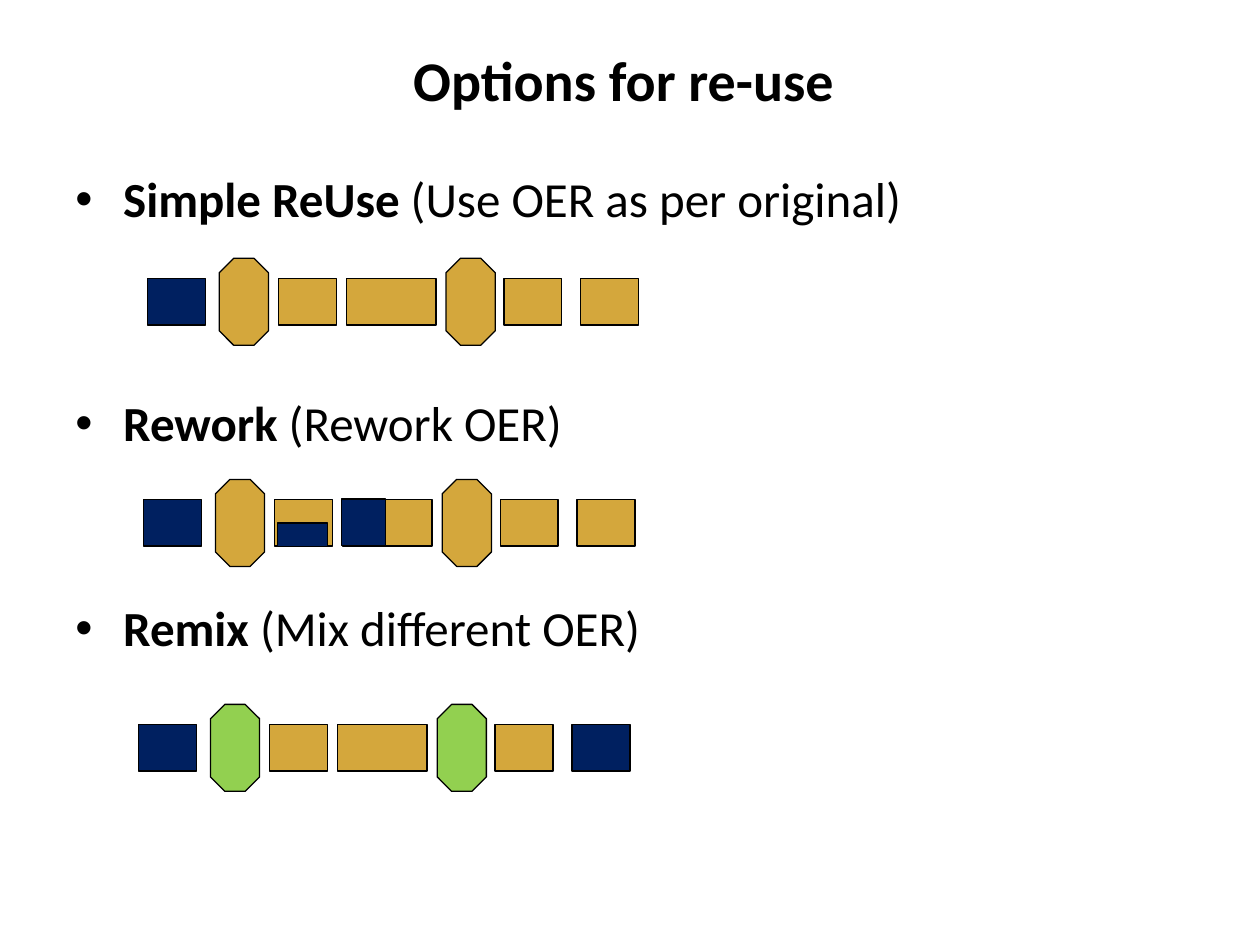
from lxml import etree
from pptx import Presentation
from pptx.dml.color import RGBColor
from pptx.enum import shapes, text
from pptx.oxml import ns
from pptx.util import Inches, Pt

THEME = {
    "font": "Calibri", "title_size": 32, "body_size": 28, "line_width": 0.75,
    "black": "000000", "own": "002060", "oer": "D4A73C", "other_oer": "92D050",
}

TITLE = "Options for re-use "
# Term, explanation, space before in points
OPTIONS = [
    ("Simple ReUse", " (Use OER as per original)", 0),
    ("Rework", " (Rework OER)", 94.5),
    ("Remix", " (Mix different OER)", 83.5),
]

# Every chain has the same parts: offset from the chain's left edge, kind
PARTS = [(0, "block"), (0.57, "octagon"), (1.04, "block"), (1.58, "wide"),
         (2.37, "octagon"), (2.83, "block"), (3.44, "block")]
RECTANGLE, OCTAGON = shapes.MSO_SHAPE.RECTANGLE, shapes.MSO_SHAPE.OCTAGON
KINDS = {"block": (RECTANGLE, 0.46, 0.37), "wide": (RECTANGLE, 0.71, 0.37),
         "octagon": (OCTAGON, 0.39, 0.69)}

# Left edge, centre line, source of each part
CHAINS = [
    (1.17, 2.395, ["own"] + ["oer"] * 6),
    (1.14, 4.15, ["own"] + ["oer"] * 6),
    (1.1, 5.935, ["own", "other_oer", "oer", "oer", "other_oer", "oer", "own"]),
]
# Own content laid over the reworked parts
REWORKED = [(2.2, 4.15, 0.4, 0.19), (2.71, 3.96, 0.35, 0.37)]


def color(name):
    return RGBColor.from_string(THEME[name])


def style(font, size, bold):
    values = {"name": THEME["font"], "size": Pt(size), "bold": bold}
    for attribute, value in values.items():
        setattr(font, attribute, value)
    font.color.rgb = color("black")


def add_part(parent, geometry, box, source):
    part = parent.add_shape(geometry, *map(Inches, box))
    part.shadow.inherit = False
    part.fill.solid()
    part.fill.fore_color.rgb = color(source)
    part.line.color.rgb = color("black")
    part.line.width = Pt(THEME["line_width"])


def add_title(slide):
    title = slide.shapes.title
    place = {"left": 0.5, "top": 0, "width": 9, "height": 1.25}
    for attribute, value in place.items():
        setattr(title, attribute, Inches(value))
    title.text_frame.vertical_anchor = text.MSO_ANCHOR.MIDDLE
    paragraph = title.text_frame.paragraphs[0]
    paragraph.alignment = text.PP_ALIGN.CENTER
    run = paragraph.add_run()
    run.text = TITLE
    style(run.font, THEME["title_size"], True)


def add_bullet(paragraph):
    properties = paragraph._p.get_or_add_pPr()
    properties.set("marL", str(Inches(0.38)))
    properties.set("indent", str(Inches(-0.38)))
    etree.SubElement(properties, ns.qn("a:buFont")).set("typeface", "Arial")
    etree.SubElement(properties, ns.qn("a:buChar")).set("char", "•")


def add_options(slide):
    frame = slide.shapes.add_textbox(*map(Inches, (0.5, 1.29, 8.17, 5.33))).text_frame
    frame.word_wrap = True
    for index, (term, explanation, gap) in enumerate(OPTIONS):
        paragraph = frame.add_paragraph() if index else frame.paragraphs[0]
        add_bullet(paragraph)
        paragraph.space_before = Pt(gap)
        for words, bold in ((term, True), (explanation, False)):
            run = paragraph.add_run()
            run.text = words
            style(run.font, THEME["body_size"], bold)


def add_chains(slide):
    for left, middle, sources in CHAINS:
        chain = slide.shapes.add_group_shape()
        for (offset, kind), source in zip(PARTS, sources):
            geometry, width, height = KINDS[kind]
            box = (left + offset, middle - height / 2, width, height)
            add_part(chain.shapes, geometry, box, source)
    for box in REWORKED:
        add_part(slide.shapes, RECTANGLE, box, "own")


def main():
    deck = Presentation()
    deck.slide_width, deck.slide_height = Inches(10), Inches(7.5)
    slide = deck.slides.add_slide(deck.slide_layouts.get_by_name("Title Only"))
    add_title(slide)
    add_options(slide)
    add_chains(slide)
    deck.save("out.pptx")


if __name__ == "__main__":
    main()
